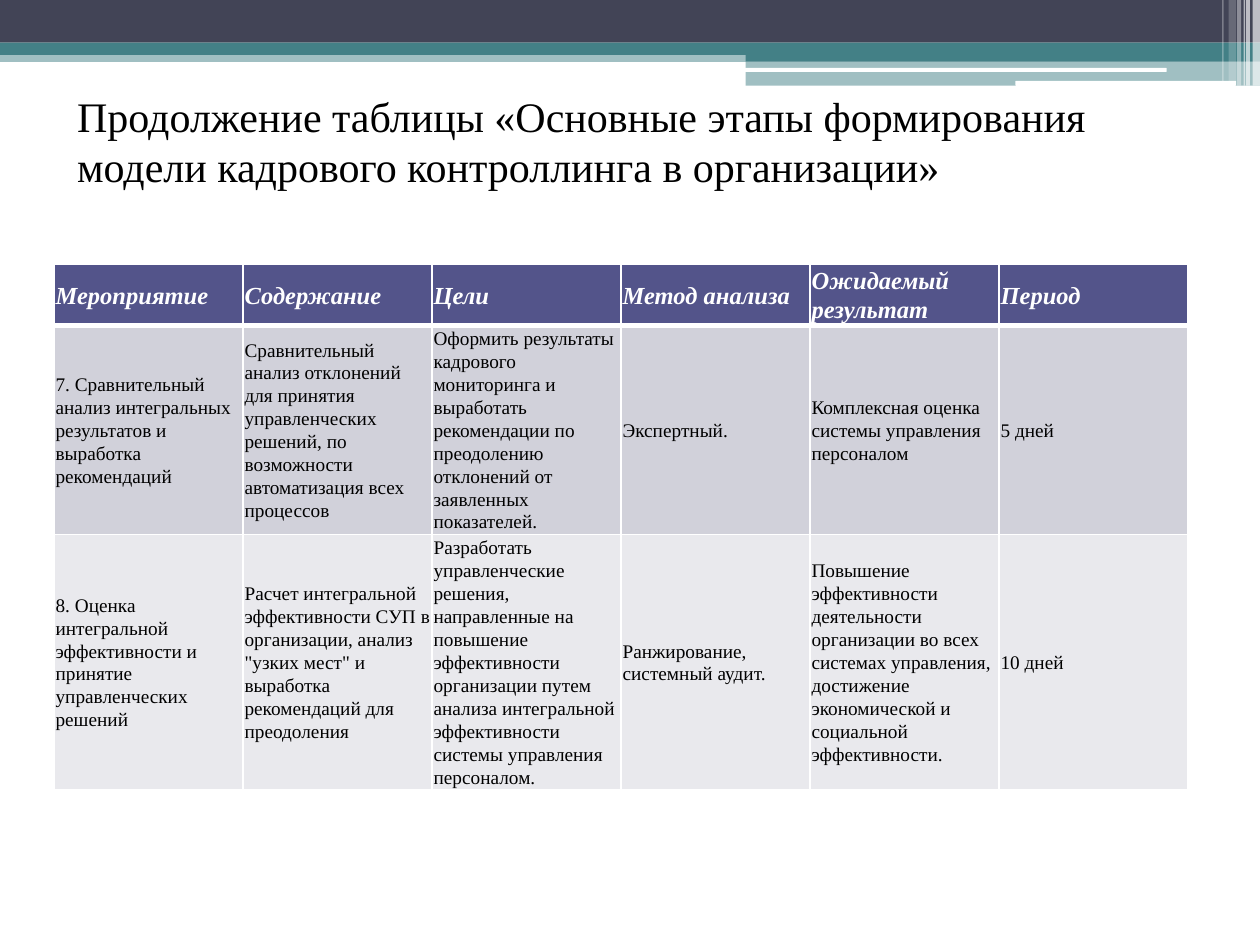
from lxml.etree import SubElement
from pptx import Presentation
from pptx.dml.color import RGBColor
from pptx.enum.shapes import MSO_SHAPE as Preset
from pptx.enum.text import MSO_ANCHOR as Anchor, MSO_AUTO_SIZE as AutoSize, PP_ALIGN as Align
from pptx.oxml.ns import qn
from pptx.util import Cm, Pt

COLORS = {
    "white": "FFFFFF",
    "black": "000000",
    "slate": "424456",
    "teal": "438086",
    "header": "53548A",
    "odd_row": "D1D1DA",
    "even_row": "E9E9ED",
}
FONT = "Times New Roman"

BANDS = [
    (0, 1.02, 25.4, 0.23, "teal", 50),
    (0, 0, 25.4, 0.86, "slate", 100),
    (0, 0.86, 25.4, 0.25, "teal", 100),
    (15.03, 0.99, 10.37, 0.25, "teal", 100),
    (15.03, 1.24, 10.37, 0.49, "teal", 50),
]
HIGHLIGHTS = [(15.01, 1.37, 8.51, 0.08), (20.47, 1.63, 4.45, 0.1)]
STRIPES = [
    (25.25, 0.15, 1.73, 65),
    (25.12, 0.08, 1.73, 65),
    (25.07, 0.03, 1.73, 60),
    (24.94, 0.08, 1.73, 40),
    (24.77, 0.15, 1.63, 20),
    (24.64, 0.03, 1.63, 30),
]

TITLE = "Продолжение таблицы «Основные этапы формирования модели кадрового контроллинга в организации»"
ROWS = [
    ["Мероприятие", "Содержание", "Цели", "Метод анализа", "Ожидаемый результат", "Период"],
    [
        "7. Сравнительный анализ интегральных результатов и выработка рекомендаций",
        "Сравнительный анализ отклонений для принятия управленческих решений, "
        "по возможности автоматизация всех процессов",
        "Оформить результаты кадрового мониторинга и выработать рекомендации "
        "по преодолению отклонений от заявленных показателей.",
        "Экспертный.",
        "Комплексная оценка системы управления персоналом",
        "5 дней",
    ],
    [
        "8. Оценка интегральной эффективности и принятие управленческих решений",
        "Расчет интегральной эффективности СУП в организации, анализ \"узких мест\" "
        "и выработка рекомендаций для преодоления",
        "Разработать управленческие решения, направленные на повышение эффективности "
        "организации путем анализа интегральной эффективности системы управления персоналом.",
        "Ранжирование, системный аудит.",
        "Повышение эффективности деятельности организации во всех системах управления, "
        "достижение экономической и социальной эффективности.",
        "10 дней",
    ],
]
ROW_HEIGHTS = [1.2, 4.2, 5.13]
ROW_FILLS = ["header", "odd_row", "even_row"]
COLUMN_WIDTH = 3.81


def color(name):
    return RGBColor.from_string(COLORS[name])


def write_text(frame, text, size, ink="black", align=Align.LEFT, spacing=None, bold=False, italic=False):
    frame.word_wrap = True
    paragraph = frame.paragraphs[0]
    paragraph.alignment = align
    paragraph.line_spacing = spacing
    run = paragraph.add_run()
    run.text = text
    font = run.font
    font.name, font.size, font.bold, font.italic = FONT, Pt(size), bold, italic
    font.color.rgb = color(ink)


def add_borders(cell, bottom_width):
    properties = cell._tc.get_or_add_tcPr()
    for side, width in (("L", 1), ("R", 1), ("T", 1), ("B", bottom_width)):
        line = SubElement(properties, qn(f"a:ln{side}"), w=str(Pt(width)))
        SubElement(SubElement(line, qn("a:solidFill")), qn("a:srgbClr"), val=COLORS["white"])


class SlideBuilder:
    def __init__(self, slide):
        self.slide = slide

    def bar(self, left, top, width, height, fill, opacity=100, preset=Preset.RECTANGLE):
        shape = self.slide.shapes.add_shape(preset, Cm(left), Cm(top), Cm(width), Cm(height))
        shape.shadow.inherit = False
        shape.line.fill.background()
        shape.fill.solid()
        shape.fill.fore_color.rgb = color(fill)
        if opacity < 100:
            value = shape._element.spPr.find(".//" + qn("a:srgbClr"))
            SubElement(value, qn("a:alpha"), val=str(opacity * 1000))

    def title(self, text, left, top, width, height):
        shape = self.slide.shapes.title
        shape.left, shape.top, shape.width, shape.height = Cm(left), Cm(top), Cm(width), Cm(height)
        frame = shape.text_frame
        frame.auto_size = AutoSize.NONE
        frame.vertical_anchor = Anchor.MIDDLE
        write_text(frame, text, 24)

    def table(self, left, top):
        columns = len(ROWS[0])
        table = self.slide.shapes.add_table(
            len(ROWS), columns, Cm(left), Cm(top), Cm(COLUMN_WIDTH * columns), Cm(sum(ROW_HEIGHTS))
        ).table
        for column in table.columns:
            column.width = Cm(COLUMN_WIDTH)
        for index, texts in enumerate(ROWS):
            table.rows[index].height = Cm(ROW_HEIGHTS[index])
            for position, text in enumerate(texts):
                self.cell(table.cell(index, position), text, ROW_FILLS[index], index == 0)

    def cell(self, cell, text, fill, is_header):
        cell.margin_left = cell.margin_right = cell.margin_top = cell.margin_bottom = Cm(0.03)
        cell.vertical_anchor = Anchor.MIDDLE
        add_borders(cell, 3 if is_header else 1)
        cell.fill.solid()
        cell.fill.fore_color.rgb = color(fill)
        if is_header:
            write_text(cell.text_frame, text, 14, "white", Align.JUSTIFY, 1.07, bold=True, italic=True)
        else:
            write_text(cell.text_frame, text, 11, spacing=1.07)


def main():
    presentation = Presentation()
    presentation.slide_width, presentation.slide_height = Cm(25.4), Cm(19.05)
    builder = SlideBuilder(presentation.slides.add_slide(presentation.slide_layouts[5]))
    for band in BANDS:
        builder.bar(*band)
    for highlight in HIGHLIGHTS:
        builder.bar(*highlight, "white", preset=Preset.ROUNDED_RECTANGLE)
    for left, width, height, opacity in STRIPES:
        builder.bar(left, 0, width, height, "white", opacity)
    builder.title(TITLE, 1.3, 1.73, 22.86, 2.2)
    builder.table(1.09, 5.33)
    presentation.save("out.pptx")


if __name__ == "__main__":
    main()
